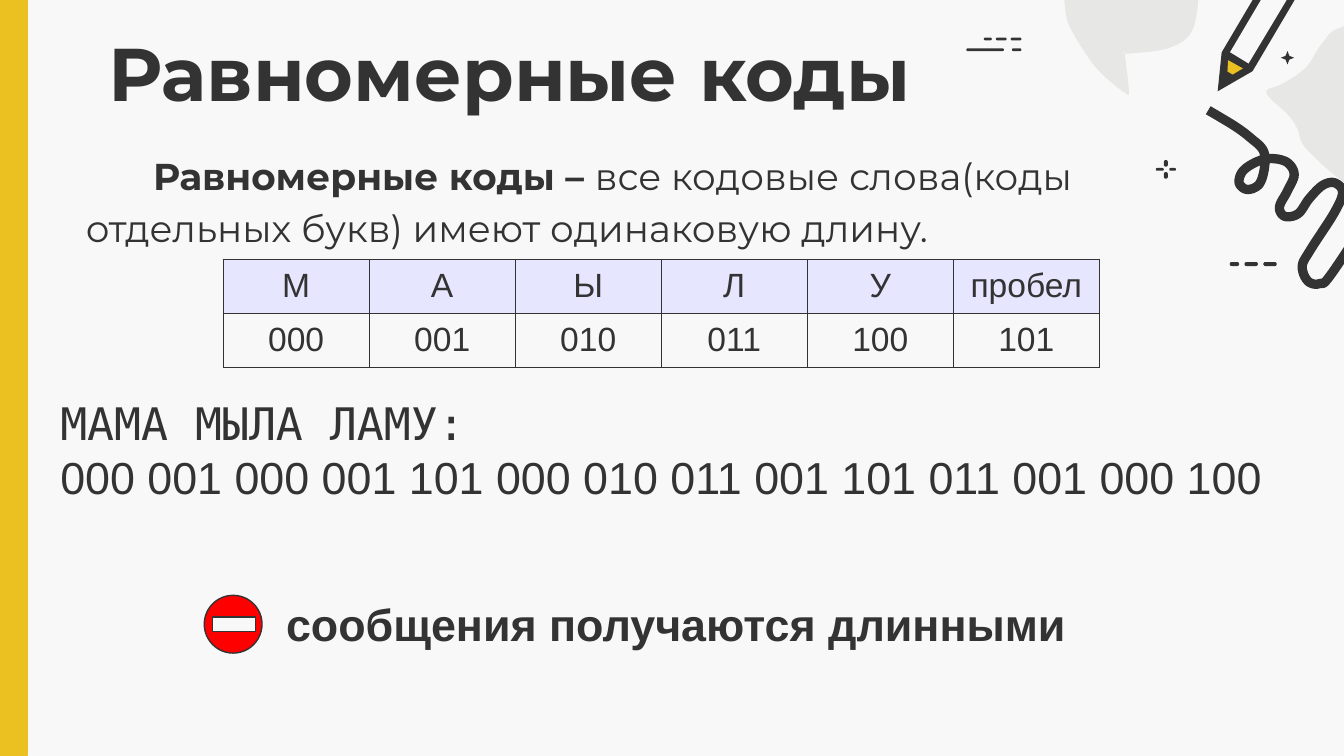
from pptx import Presentation, util as u
from pptx.dml.color import RGBColor
from pptx.enum import shapes, text
from pptx.oxml.ns import qn
from lxml import etree

DARK = RGBColor(0x33, 0x33, 0x33)
PAPER = RGBColor(0xF8, 0xF8, 0xF8)
GREY = RGBColor(0xE7, 0xE7, 0xE5)
YELLOW = RGBColor(0xEB, 0xC1, 0x22)
RED = RGBColor(0xFF, 0x00, 0x00)
LILAC = RGBColor(0xE6, 0xE6, 0xFF)

SHAPE = shapes.MSO_SHAPE
ANCHOR = text.MSO_ANCHOR
ALIGN = text.PP_ALIGN

CODES = {"М": "000", "А": "001", "Ы": "010", "Л": "011", "У": "100", "пробел": "101"}
MESSAGE = "МАМА МЫЛА ЛАМУ"

BUBBLE = [(8.28, -0.57), (8.04, -0.49), (7.93, -0.23), (7.93, 0.1), (8.01, 0.29),
          (8.17, 0.52), (8.37, 0.69), (8.4, 0.67), (8.37, 0.4), (8.39, 0.4),
          (8.69, 0.36), (8.87, 0.23), (8.92, -0.08), (8.89, -0.37), (8.69, -0.53)]
BLOB = [(10.91, 0.45), (10.96, 0.99), (10.66, 1.37), (10.15, 1.43), (9.74, 1.13),
        (9.65, 0.95), (9.58, 0.85), (9.45, 0.73), (9.43, 0.67), (9.55, 0.62),
        (9.72, 0.5), (9.84, 0.32), (9.99, 0.2), (10.47, 0.13)]
SCRIBBLE = [(8.99, 0.82), (9.19, 0.94), (9.31, 1.03), (9.4, 1.12), (9.41, 1.24),
            (9.37, 1.37), (9.28, 1.41), (9.22, 1.36), (9.25, 1.27), (9.36, 1.2),
            (9.47, 1.18), (9.58, 1.21), (9.63, 1.3), (9.58, 1.42), (9.52, 1.54),
            (9.56, 1.61), (9.66, 1.59), (9.74, 1.48), (9.84, 1.38), (9.93, 1.36),
            (9.99, 1.43), (9.93, 1.58), (9.75, 1.86), (9.69, 1.98), (9.73, 2.09),
            (9.82, 2.11), (9.92, 2.02), (10.35, 1.36)]
PENCIL = [
    (DARK, [(9.74, -0.18), (9.51, -0.32), (9.09, 0.39), (9.06, 0.68), (9.32, 0.53)]),
    (PAPER, [(9.67, -0.16), (9.28, 0.49), (9.14, 0.41), (9.53, -0.25)]),
    (YELLOW, [(9.28, 0.49), (9.13, 0.58), (9.14, 0.41)]),
    (DARK, [(9.3, 0.48), (9.12, 0.37), (9.09, 0.42), (9.27, 0.52)]),
    (DARK, [(9.11, 0.52), (9.08, 0.57), (9.15, 0.61), (9.18, 0.56)]),
]
DASHES = [
    (7.19, 0.36, 0.28, 0.02), (7.53, 0.36, 0.07, 0.02),
    (7.32, 0.28, 0.06, 0.02), (7.41, 0.28, 0.08, 0.02), (7.52, 0.28, 0.08, 0.02),
    (9.15, 1.95, 0.07, 0.03), (9.26, 1.95, 0.1, 0.03), (9.4, 1.95, 0.1, 0.03),
    (8.66, 1.19, 0.03, 0.05), (8.66, 1.28, 0.03, 0.05),
    (8.6, 1.25, 0.06, 0.02), (8.7, 1.25, 0.05, 0.02),
]


def apply(obj, **values):
    for name, value in values.items():
        setattr(obj, name, value)


def inches(*values):
    return [u.Inches(v) for v in values]


def paint(sp, fill=None, line=None, width=0.75):
    sp.shadow.inherit = False
    for part, colour in ((sp.fill, fill), (sp.line.fill, line)):
        if colour is None:
            part.background()
        else:
            part.solid()
            part.fore_color.rgb = colour
    if line is not None:
        sp.line.width = u.Pt(width)


def add_shape(s, kind, box, fill, line=None):
    sp = s.shapes.add_shape(kind, *inches(*box))
    paint(sp, fill, line)
    return sp


def spline(a, b, c, d, t):
    return b + (t * (c - a) + t**2 * (2*a - 5*b + 4*c - d) + t**3 * (3*b - a - 3*c + d)) / 2


def smooth(points, closed, steps=6):
    n = len(points)

    def at(i):
        return points[i % n] if closed else points[min(max(i, 0), n - 1)]

    curve = []
    for i in range(n if closed else n - 1):
        axes = list(zip(*[at(i + k) for k in (-1, 0, 1, 2)]))
        curve += [[spline(*axis, k / steps) for axis in axes] for k in range(steps)]
    return curve if closed else curve + [points[-1]]


def add_outline(s, points, closed=True, **look):
    start, *rest = [inches(*pt) for pt in points]
    builder = s.shapes.build_freeform(*start)
    builder.add_line_segments(rest, close=closed)
    paint(builder.convert_to_shape(), **look)


def add_run(p, wording, size, name, bold=False):
    r = p.add_run()
    r.text = wording
    apply(r.font, size=u.Pt(size), name=name, bold=bold)
    r.font.color.rgb = DARK


def add_text(s, box, lines, anchor=ANCHOR.TOP, inset=0.05):
    tf = s.shapes.add_textbox(*inches(*box)).text_frame
    apply(tf, word_wrap=True, vertical_anchor=anchor,
          margin_top=u.Inches(inset), margin_bottom=u.Inches(inset))
    p = tf.paragraphs[0]
    for i, runs in enumerate(lines):
        if i:
            p.add_line_break()
        for run in runs:
            add_run(p, *run)
    return p


def set_title(s, wording):
    sp = s.shapes.title
    left, top, width, height = inches(0.71, 0.1, 8.43, 0.63)
    apply(sp, left=left, top=top, width=width, height=height)
    tf = sp.text_frame
    apply(tf, word_wrap=True, auto_size=text.MSO_AUTO_SIZE.NONE, vertical_anchor=ANCHOR.TOP,
          margin_top=u.Inches(0.1), margin_bottom=u.Inches(0.1))
    p = tf.paragraphs[0]
    p.alignment = ALIGN.LEFT
    add_run(p, wording, 40, "Montserrat", True)


def set_borders(cell):
    pr = cell._tc.get_or_add_tcPr()
    for i, side in enumerate(("lnL", "lnR", "lnT", "lnB")):
        ln = etree.Element(qn("a:" + side), w=str(u.Pt(0.5)))
        fill = etree.SubElement(ln, qn("a:solidFill"))
        etree.SubElement(fill, qn("a:srgbClr"), val=str(DARK))
        pr.insert(i, ln)


def add_code_table(s):
    rows = [list(CODES), list(CODES.values())]
    box = inches(1.66, 1.93, 6.52, 0.8)
    table = s.shapes.add_table(len(rows), len(CODES), *box).table
    apply(table, first_row=False, horz_banding=False)
    for i, row in enumerate(rows):
        for j, wording in enumerate(row):
            cell = table.cell(i, j)
            cell.vertical_anchor = ANCHOR.MIDDLE
            if i == 0:
                cell.fill.solid()
                cell.fill.fore_color.rgb = LILAC
            else:
                cell.fill.background()
            p = cell.text_frame.paragraphs[0]
            p.alignment = ALIGN.CENTER
            add_run(p, wording, 18, "Arial")
            set_borders(cell)


def add_decor(s):
    add_shape(s, SHAPE.RECTANGLE, (-0.01, 0, 0.21, 5.62), YELLOW, YELLOW)
    for points in (BLOB, BUBBLE):
        add_outline(s, smooth(points, True), fill=GREY)
    for colour, points in PENCIL:
        add_outline(s, points, fill=colour)
    add_outline(s, smooth(SCRIBBLE, False), closed=False, line=DARK, width=5)
    for box in DASHES:
        add_shape(s, SHAPE.ROUNDED_RECTANGLE, box, DARK).adjustments[0] = 0.5
    add_shape(s, SHAPE.STAR_4_POINT, (9.53, 0.38, 0.1, 0.1), DARK).adjustments[0] = 0.2


def main():
    prs = Presentation()
    apply(prs, slide_width=u.Inches(10), slide_height=u.Inches(10) * 9 // 16)
    s = prs.slides.add_slide(prs.slide_layouts[5])
    s.background.fill.solid()
    s.background.fill.fore_color.rgb = PAPER

    add_decor(s)
    set_title(s, "Равномерные коды")
    p = add_text(s, (0.54, 1.01, 7.99, 0.95), [[
        ("Равномерные коды – ", 20, "Montserrat", True),
        ("все кодовые слова(коды отдельных букв) имеют одинаковую длину.", 20, "Montserrat"),
    ]], ANCHOR.BOTTOM, 0.1)
    p.line_spacing = 1.15
    p._p.get_or_add_pPr().set("indent", str(u.Inches(0.5)))

    encoded = " ".join(CODES.get(letter, CODES["пробел"]) for letter in MESSAGE)
    add_text(s, (0.35, 2.89, 9.58, 0.91), [
        [(MESSAGE + ":", 24, "DejaVu Sans Mono")],
        [(encoded, 24, "Arial")],
    ], ANCHOR.MIDDLE)
    add_code_table(s)

    add_shape(s, SHAPE.OVAL, (1.52, 4.43, 0.43, 0.43), RED, DARK)
    add_shape(s, SHAPE.RECTANGLE, (1.58, 4.59, 0.32, 0.11), PAPER, DARK)
    add_text(s, (2.03, 4.39, 6.79, 0.51),
             [[("сообщения получаются длинными", 24, "Arial", True)]])
    prs.save("out.pptx")


if __name__ == "__main__":
    main()
